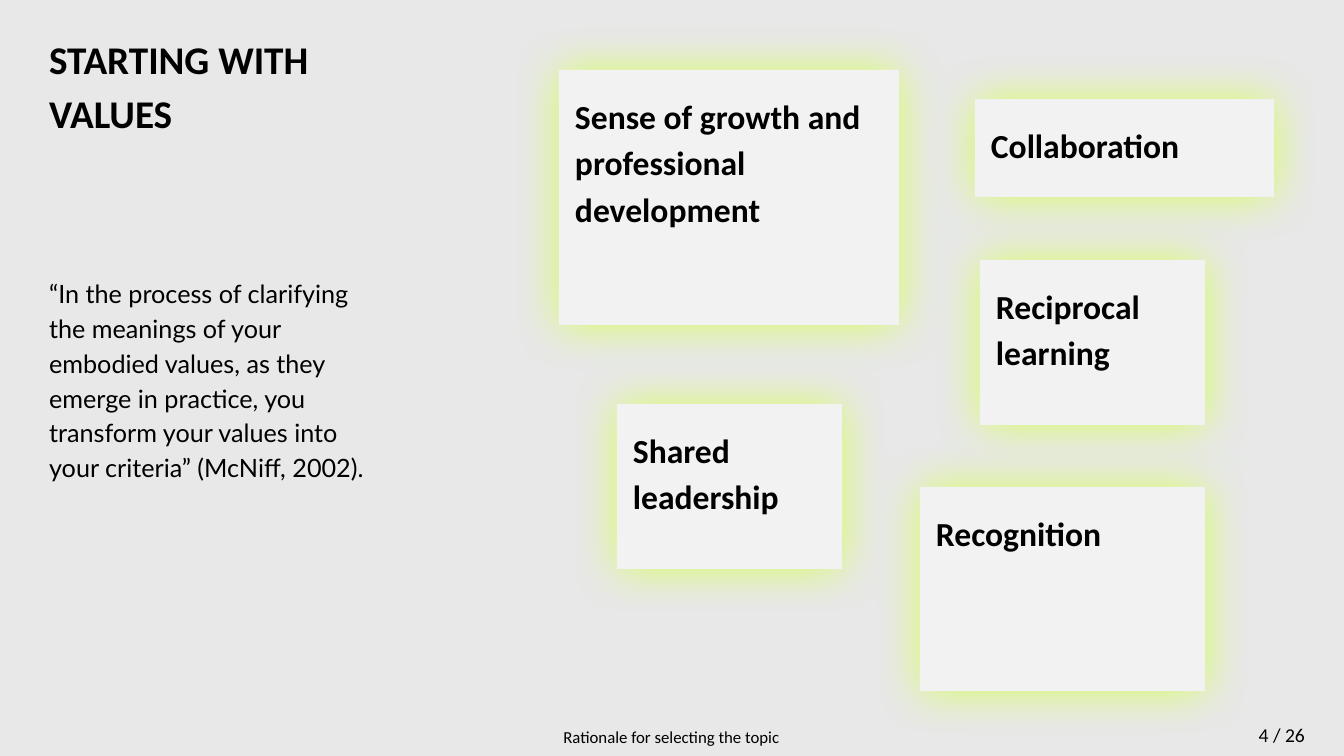
from dataclasses import dataclass

from lxml.etree import SubElement
from pptx import Presentation
from pptx.dml.color import RGBColor
from pptx.enum.shapes import MSO_SHAPE
from pptx.enum.text import MSO_ANCHOR, MSO_AUTO_SIZE, PP_ALIGN
from pptx.oxml.ns import qn
from pptx.util import Pt

EMU_PER_PX = 914400 / 100.8


@dataclass(frozen=True)
class Theme:
    background: str = "E8E8E8"
    card: str = "F2F2F2"
    glow: str = "D7FF60"
    ink: str = "000000"
    font: str = "Calibri"
    quote_font: str = "Lato"
    heading_size: int = 28
    card_size: int = 24
    quote_size: int = 18
    page_size: int = 14
    footer_size: int = 12
    glow_radius: float = 33.5


THEME = Theme()

VALUES = [
    ("Sense of growth and professional development", (559, 70, 340, 255)),
    ("Reciprocal learning", (980, 260, 225, 165)),
    ("Shared leadership", (617, 404, 225, 165)),
    ("Recognition", (920, 487, 285, 204)),
    ("Collaboration", (975, 99, 299, 98)),
]


def px(n):
    return round(n * EMU_PER_PX)


def place(sp, box):
    sp.left, sp.top, sp.width, sp.height = map(px, box)


def write(sp, text, size, font=THEME.font, bold=False, align=PP_ALIGN.LEFT):
    tf = sp.text_frame
    tf.word_wrap = True
    tf.auto_size = MSO_AUTO_SIZE.NONE
    tf.vertical_anchor = MSO_ANCHOR.TOP
    p = tf.paragraphs[0]
    p.alignment = align
    p.line_spacing = 1.15
    p.space_before = Pt(0)
    p.space_after = Pt(4)
    r = p.add_run()
    r.text = text
    r.font.name = font
    r.font.size = Pt(size)
    r.font.bold = bold
    r.font.color.rgb = RGBColor.from_string(THEME.ink)


def add_glow(sp):
    sp.shadow.inherit = False
    effects = sp._element.spPr.find(qn("a:effectLst"))
    shadow = SubElement(effects, qn("a:outerShdw"), blurRad=str(Pt(THEME.glow_radius)),
                        dist="0", dir="0", algn="ctr", rotWithShape="0")
    SubElement(shadow, qn("a:srgbClr"), val=THEME.glow)


def add_card(s, text, box):
    sp = s.shapes.add_shape(MSO_SHAPE.RECTANGLE, *map(px, box))
    sp.fill.solid()
    sp.fill.fore_color.rgb = RGBColor.from_string(THEME.card)
    sp.line.fill.background()
    add_glow(sp)
    tf = sp.text_frame
    tf.margin_left = tf.margin_right = px(16)
    tf.margin_top = tf.margin_bottom = px(20)
    write(sp, text, THEME.card_size, bold=True)


def add_label(s, text, box, size, align):
    sp = s.shapes.add_textbox(*map(px, box))
    write(sp, text, size, align=align)


def main():
    prs = Presentation()
    prs.slide_width, prs.slide_height = px(1344), px(756)
    s = prs.slides.add_slide(prs.slide_layouts[0])
    s.background.fill.solid()
    s.background.fill.fore_color.rgb = RGBColor.from_string(THEME.background)

    heading, quote = s.placeholders
    place(heading, (39, 23, 388, 66))
    write(heading, "STARTING WITH VALUES", THEME.heading_size, bold=True)
    place(quote, (39, 269, 340, 219))
    write(quote, "“In the process of clarifying the meanings of your embodied values, "
          "as they emerge in practice, you transform your values into your criteria” "
          "(McNiff, 2002).", THEME.quote_size, THEME.quote_font)

    for text, box in VALUES:
        add_card(s, text, box)

    add_label(s, "4 / 26", (975, 714, 340, 42), THEME.page_size, PP_ALIGN.RIGHT)
    add_label(s, "Rationale for selecting the topic", (427, 719, 489, 42),
              THEME.footer_size, PP_ALIGN.CENTER)
    prs.save("out.pptx")


if __name__ == "__main__":
    main()
